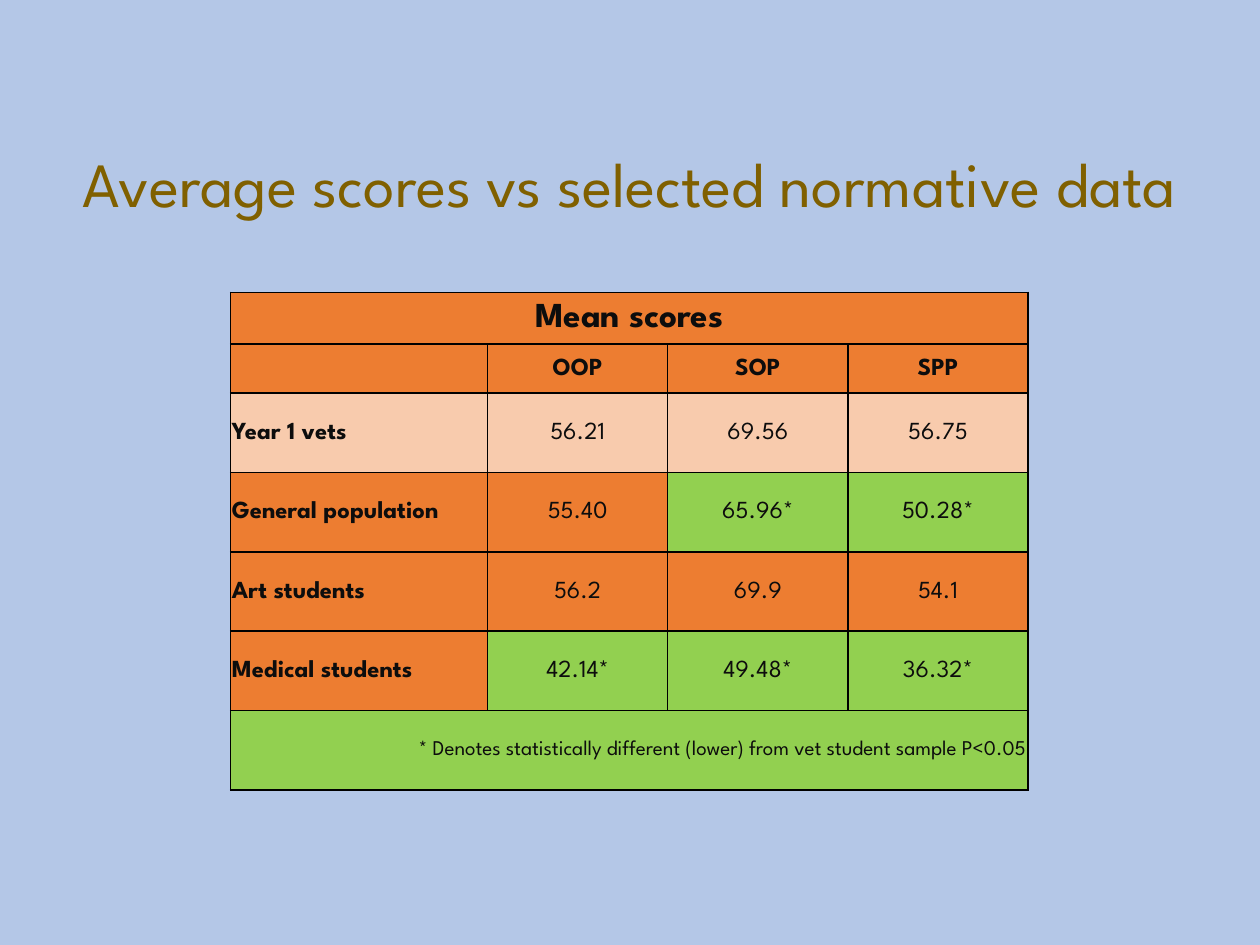
from lxml import etree
from pptx import Presentation
from pptx import util as u
from pptx.dml.color import RGBColor
from pptx.enum import text as t
from pptx.oxml import ns

SKY = RGBColor(0xB4, 0xC7, 0xE7)
OLIVE = RGBColor(0x80, 0x60, 0x00)
INK = RGBColor(0x0D, 0x0D, 0x0D)
BLACK = RGBColor(0, 0, 0)
ORANGE = RGBColor(0xED, 0x7D, 0x31)
PEACH = RGBColor(0xF8, 0xCB, 0xAD)
GREEN = RGBColor(0x92, 0xD0, 0x50)
FONT = "League Spartan"
LEFT, CENTER, RIGHT = t.PP_ALIGN.LEFT, t.PP_ALIGN.CENTER, t.PP_ALIGN.RIGHT

HEADING = "Mean scores"
FOOTNOTE = "* Denotes statistically different (lower) from vet student sample P<0.05"
SCORES = [
    ["", "OOP", "SOP", "SPP"],
    ["Year 1 vets", "56.21", "69.56", "56.75"],
    ["General population", "55.40", "65.96*", "50.28*"],
    ["Art students", "56.2", "69.9", "54.1"],
    ["Medical students", "42.14*", "49.48*", "36.32*"],
]
COLUMN_WIDTHS = [2.04] + [1.43] * 3
ROW_HEIGHTS = [0.41, 0.39] + [0.63] * 5


def write(frame, words, size=14, color=INK, bold=False, align=CENTER, spacing=None):
    paragraph = frame.paragraphs[0]
    paragraph.alignment = align
    paragraph.line_spacing = spacing
    if words:
        run = paragraph.add_run()
        run.text = words
        run.font.name = FONT
        run.font.size = u.Pt(size)
        run.font.bold = bold
        run.font.color.rgb = color


def outline(cell):
    properties = cell._tc.get_or_add_tcPr()
    for position, side in enumerate(("lnL", "lnR", "lnT", "lnB")):
        border = etree.Element(ns.qn(f"a:{side}"), w=str(u.Pt(1)))
        fill = etree.SubElement(border, ns.qn("a:solidFill"))
        etree.SubElement(fill, ns.qn("a:srgbClr"), val=str(BLACK))
        properties.insert(position, border)


def style_cell(cell, words, fill, **style):
    cell.margin_left = cell.margin_right = cell.margin_top = u.Inches(0.01)
    cell.margin_bottom = 0
    cell.vertical_anchor = t.MSO_ANCHOR.MIDDLE
    cell.fill.solid()
    cell.fill.fore_color.rgb = fill
    outline(cell)
    write(cell.text_frame, words, **style)


def add_banner(table, row, words, fill, **style):
    first, *rest = table.rows[row].cells
    first.merge(rest[-1])
    style_cell(first, words, fill, **style)
    for cell in rest:
        outline(cell)


def add_scores(table):
    for row, values in enumerate(SCORES):
        base = PEACH if row == 1 else ORANGE
        for column, value in enumerate(values):
            style_cell(
                table.cell(row + 1, column),
                value,
                GREEN if value.endswith("*") else base,
                bold=row == 0 or column == 0,
                align=LEFT if row and column == 0 else CENTER,
            )


def add_score_table(slide):
    table = slide.shapes.add_table(
        len(ROW_HEIGHTS), len(COLUMN_WIDTHS), u.Inches(1.83), u.Inches(2.32),
        u.Inches(sum(COLUMN_WIDTHS)), u.Inches(sum(ROW_HEIGHTS)),
    ).table
    table.first_row = table.horz_banding = False
    for column, width in zip(table.columns, COLUMN_WIDTHS):
        column.width = u.Inches(width)
    for row, height in zip(table.rows, ROW_HEIGHTS):
        row.height = u.Inches(height)
    add_banner(table, 0, HEADING, ORANGE, size=20, bold=True)
    add_scores(table)
    add_banner(table, len(ROW_HEIGHTS) - 1, FOOTNOTE, GREEN, size=12, align=RIGHT)


def add_title(slide, words):
    title = slide.shapes.title
    title.left, title.top = u.Inches(0.07), u.Inches(0.76)
    title.width, title.height = u.Inches(9.86), u.Inches(1.45)
    title.text_frame.vertical_anchor = t.MSO_ANCHOR.MIDDLE
    write(title.text_frame, words, size=36, color=OLIVE, spacing=0.9)


def main():
    deck = Presentation()
    deck.slide_width, deck.slide_height = u.Inches(10), u.Inches(7.5)
    slide = deck.slides.add_slide(deck.slide_layouts[5])
    slide.background.fill.solid()
    slide.background.fill.fore_color.rgb = SKY
    add_title(slide, "Average scores vs selected normative data")
    add_score_table(slide)
    deck.save("out.pptx")


if __name__ == "__main__":
    main()
